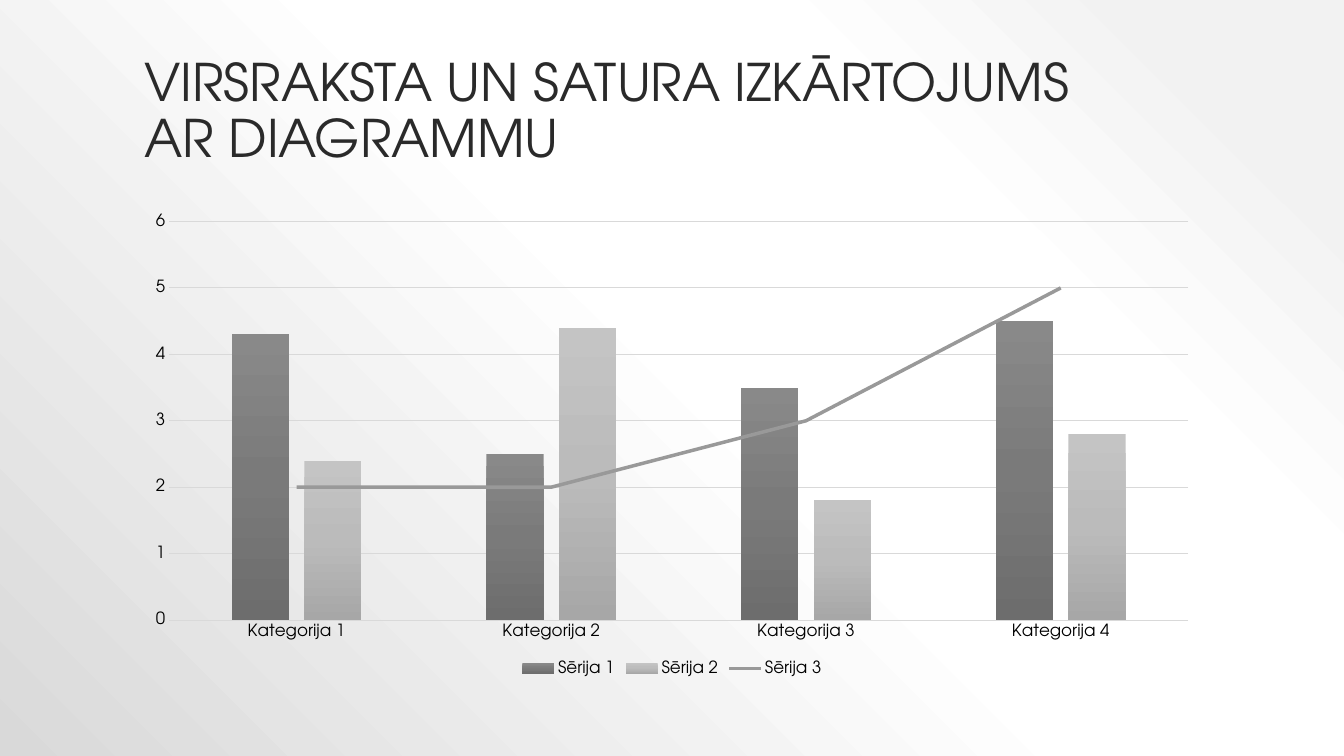
from lxml.etree import SubElement
from pptx import Presentation
from pptx.chart.data import CategoryChartData
from pptx.dml.color import RGBColor
from pptx.enum.chart import XL_CHART_TYPE, XL_LEGEND_POSITION, XL_MARKER_STYLE, XL_TICK_MARK
from pptx.enum.text import MSO_ANCHOR, MSO_AUTO_SIZE, PP_ALIGN
from pptx.oxml import parse_xml
from pptx.oxml.ns import nsdecls, qn
from pptx.util import Inches, Pt

FONT = "TeX Gyre Adventor"
GRID_COLOR = "D9D9D9"
LINE_COLOR = "999999"
BACKGROUND_STOPS = [(10, "F2F2F2"), (28, "FFFFFF"), (48, "FFFFFF"), (100, "D9D9D9")]
CORNER_SHADE = '<a:path path="circle"><a:fillToRect l="100000" b="100000"/></a:path>'
DOWN_SHADE = '<a:lin ang="5400000" scaled="0"/>'
CATEGORIES = [f"Kategorija {number}" for number in range(1, 5)]
SERIES = {
    "Sērija 1": (4.3, 2.5, 3.5, 4.5),
    "Sērija 2": (2.4, 4.4, 1.8, 2.8),
    "Sērija 3": (2, 2, 3, 5),
}
COLUMN_STOPS = [
    [(0, "898989"), (50, "7A7A7A"), (100, "6D6D6D")],
    [(0, "C4C4C4"), (50, "BBBBBB"), (100, "A7A7A7")],
]


def color(value):
    """Turn a hex string into a colour."""
    return RGBColor.from_string(value)


def set_font(font, size, value):
    """Give a font the deck's typeface, a size and a colour."""
    font.name = FONT
    font.size = Pt(size)
    font.color.rgb = color(value)


def set_line(line, value, width):
    """Give a line a colour and a width."""
    line.color.rgb = color(value)
    line.width = Pt(width)


def set_gradient(owner, fill, stops, shade):
    """Fill the owner element with a gradient of several stops."""
    fill.solid()
    solid = owner.find(".//" + qn("a:solidFill"))
    marks = "".join(
        f'<a:gs pos="{share * 1000}"><a:srgbClr val="{value}"/></a:gs>' for share, value in stops
    )
    gradient = parse_xml(
        f'<a:gradFill {nsdecls("a")} rotWithShape="1"><a:gsLst>{marks}</a:gsLst>{shade}</a:gradFill>'
    )
    solid.getparent().replace(solid, gradient)


def place_title(title, box, text):
    """Place the title placeholder in its box and format it."""
    title.left, title.top, title.width, title.height = box
    frame = title.text_frame
    frame.text = text
    frame.word_wrap = True
    frame.auto_size = MSO_AUTO_SIZE.NONE
    frame.vertical_anchor = MSO_ANCHOR.BOTTOM
    para = frame.paragraphs[0]
    para.alignment = PP_ALIGN.LEFT
    para.line_spacing = 0.9
    set_font(para.font, 37, "2A2A2A")


def move_last_series_to_line(chart):
    """Turn the last column series into a line on the same axes."""
    columns = chart.plots[0]._element
    series = columns.findall(qn("c:ser"))[-1]
    for flag in series.findall(qn("c:invertIfNegative")):
        series.remove(flag)
    lines = parse_xml(
        f'<c:lineChart {nsdecls("c")}><c:grouping val="standard"/><c:varyColors val="0"/></c:lineChart>'
    )
    lines.append(series)
    SubElement(lines, qn("c:marker")).set("val", "1")
    for axis in columns.findall(qn("c:axId")):
        SubElement(lines, qn("c:axId")).set("val", axis.get("val"))
    columns.addnext(lines)


def format_axes(chart):
    """Style both axes and the gridlines."""
    for axis in (chart.category_axis, chart.value_axis):
        axis.major_tick_mark = axis.minor_tick_mark = XL_TICK_MARK.NONE
        set_font(axis.tick_labels.font, 12, "000000")
    set_line(chart.category_axis.format.line, GRID_COLOR, 0.75)
    values = chart.value_axis
    values.minimum_scale, values.maximum_scale, values.major_unit = 0, 6, 1
    values.format.line.fill.background()
    set_line(values.major_gridlines.format.line, GRID_COLOR, 0.75)


def place_chart(page, box):
    """Add the column and line chart in its box."""
    data = CategoryChartData()
    data.categories = CATEGORIES
    for name, values in SERIES.items():
        data.add_series(name, values)
    chart = page.shapes.add_chart(XL_CHART_TYPE.COLUMN_CLUSTERED, *box, data).chart
    chart.has_title = False
    set_font(chart.font, 10, "545454")
    move_last_series_to_line(chart)

    columns, lines = chart.plots
    columns.gap_width = 219
    columns.overlap = -27
    columns.vary_by_categories = False
    for series, stops in zip(columns.series, COLUMN_STOPS):
        set_gradient(series._element, series.format.fill, stops, DOWN_SHADE)
    trend = lines.series[0]
    trend.smooth = False
    trend.marker.style = XL_MARKER_STYLE.NONE
    set_line(trend.format.line, LINE_COLOR, 2.5)

    format_axes(chart)
    chart.has_legend = True
    chart.legend.position = XL_LEGEND_POSITION.BOTTOM
    chart.legend.include_in_layout = False
    set_font(chart.legend.font, 12, "000000")


def build_chart_slide(deck):
    """Add the slide with a title above a chart."""
    page = deck.slides.add_slide(deck.slide_layouts[5])
    set_gradient(page.element, page.background.fill, BACKGROUND_STOPS, CORNER_SHADE)
    wide, high = deck.slide_width, deck.slide_height
    left, width = int(wide * 0.1), int(wide * 0.8)
    title_box = (left, int(high * 0.04), width, int(high * 0.19))
    chart_box = (left, int(high * 0.27), width, int(high * 0.63))
    place_title(page.shapes.title, title_box, "VIRSRAKSTA UN SATURA IZKĀRTOJUMS \vAR DIAGRAMMU")
    place_chart(page, chart_box)


def main():
    """Build and save the deck."""
    deck = Presentation()
    deck.slide_width, deck.slide_height = Inches(13.33), Inches(7.5)
    build_chart_slide(deck)
    deck.save("out.pptx")


if __name__ == "__main__":
    main()
